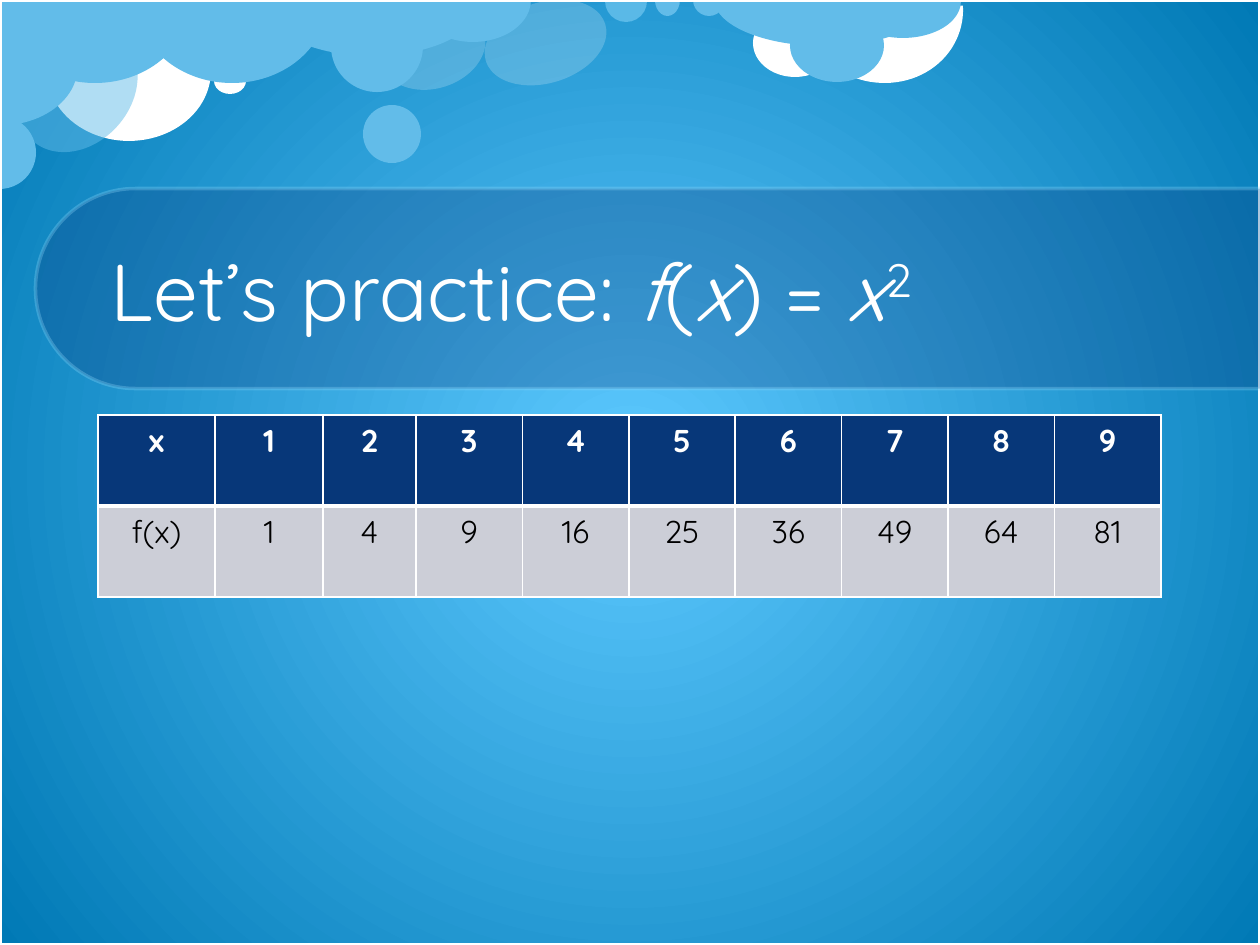
import pptx
import pptx.util
import pptx.oxml
import pptx.oxml.ns
import pptx.dml.color
import pptx.enum.shapes
import pptx.enum.text

RGB = pptx.dml.color.RGBColor
SHAPE = pptx.enum.shapes.MSO_SHAPE
ALIGN = pptx.enum.text.PP_ALIGN
ANCHOR = pptx.enum.text.MSO_ANCHOR
qn = pptx.oxml.ns.qn
Pt = pptx.util.Pt

WHITE = RGB(0xFF, 0xFF, 0xFF)
BLACK = RGB(0x00, 0x00, 0x00)
NAVY = RGB(0x07, 0x37, 0x79)
CLOUD = RGB(0x62, 0xBC, 0xE9)
PALE = RGB(0x8F, 0xD9, 0xFB)
GRAY = RGB(0xCC, 0xCE, 0xD7)
GLOW = RGB(0x5D, 0xC9, 0xFF)
DEEP = RGB(0x00, 0x79, 0xB5)

FONT = "Quicksand"
PX = 914400 // 126
SLIDE_W, SLIDE_H = 1260, 945
HALF = (0, 108)

CLOUDS = [
    (SHAPE.OVAL, (392, -6, 81, 108), WHITE, dict(rot=72.8, alpha=20)),
    (SHAPE.OVAL, (47, 1, 164, 140), WHITE, {}),
    (SHAPE.ARC, (805, -76, 152, 165), WHITE, dict(rot=106.5, adj=(151.8, 44.48))),
    (SHAPE.OVAL, (753, 9, 84, 68), WHITE, {}),
    (SHAPE.PIE, (-1, -83, 192, 166), CLOUD, dict(adj=HALF)),
    (SHAPE.PIE, (262, -55, 220, 111), CLOUD, dict(adj=HALF)),
    (SHAPE.OVAL, (363, 105, 58, 58), CLOUD, {}),
    (SHAPE.OVAL, (24, 23, 107, 135), CLOUD, dict(rot=41.8, alpha=50)),
    (SHAPE.PIE, (-37, 116, 73, 73), CLOUD, dict(rot=270, adj=HALF)),
    (SHAPE.OVAL, (214, 68, 32, 26), WHITE, {}),
    (SHAPE.PIE, (136, -83, 192, 166), CLOUD, dict(adj=HALF)),
    (SHAPE.PIE, (714, -48, 220, 94), CLOUD, dict(adj=HALF)),
    (SHAPE.OVAL, (790, 9, 94, 73), CLOUD, {}),
    (SHAPE.PIE, (845, -35, 116, 73), CLOUD, dict(adj=HALF)),
    (SHAPE.OVAL, (505, -20, 81, 125), WHITE, dict(rot=72.8, alpha=20)),
    (SHAPE.PIE, (605, -20, 42, 42), PALE, dict(alpha=50, adj=HALF)),
    (SHAPE.PIE, (655, -16, 25, 32), CLOUD, dict(adj=HALF)),
    (SHAPE.PIE, (693, -16, 32, 32), CLOUD, dict(adj=HALF)),
    (SHAPE.OVAL, (331, 0, 92, 92), CLOUD, {}),
    (SHAPE.PIE, (415, -42, 116, 84), CLOUD, dict(adj=HALF)),
    (SHAPE.PIE, (-59, -11, 117, 156), CLOUD, dict(rot=270, adj=HALF)),
]
FRAME = (0, 0, SLIDE_W, SLIDE_H)
BAND = (548, -324, 200, 1225)

TITLE_BOX = (98, 189, 1063, 199)
TITLE = [
    ("Let’s practice: ", {}),
    ("f", dict(italic=True)),
    ("(", {}),
    ("x", dict(italic=True)),
    (") = ", {}),
    ("x", dict(italic=True)),
    ("2", dict(baseline=30)),
]

TABLE_LEFT, TABLE_TOP, TABLE_W, ROW_H = 98, 415, 1063, 91
FIRST_COLS = [117, 108, 93]
INPUTS = range(1, 10)
ROWS = [
    (["x"] + [str(n) for n in INPUTS], NAVY, WHITE, True, dict(L=1, R=1, T=1, B=3)),
    (["f(x)"] + [str(n * n) for n in INPUTS], GRAY, BLACK, False, dict(L=1, R=1, T=3, B=1)),
]


def emu(lengths):
    return [round(v * PX) for v in lengths]


def set_alpha(fill_parent, percent):
    clr = next(fill_parent.iter(qn("a:srgbClr")))
    pptx.oxml.ns  # namespace helpers
    clr.makeelement
    alpha = pptx.oxml.parse_xml(
        f'<a:alpha {pptx.oxml.ns.nsdecls("a")} val="{percent * 1000}"/>')
    clr.append(alpha)


def add_text(p, text, size=18, color=WHITE, bold=False, italic=False, baseline=0):
    r = p.add_run()
    r.text = text
    r.font.name = FONT
    r.font.size = Pt(size)
    r.font.color.rgb = color
    r.font.bold = bold
    r.font.italic = italic
    if baseline:
        r.font._element.set("baseline", str(baseline * 1000))


def add_shape(slide, kind, box, color=None, rot=0, alpha=None, adj=(), line=None, line_alpha=None):
    sp = slide.shapes.add_shape(kind, *emu(box))
    sp.shadow.inherit = False
    sp.rotation = rot
    for i, value in enumerate(adj):
        sp.adjustments[i] = value
    if color is None:
        sp.fill.background()
    else:
        sp.fill.solid()
        sp.fill.fore_color.rgb = color
        if alpha:
            set_alpha(sp._element.spPr.find(qn("a:solidFill")), alpha)
    if line is None:
        sp.line.fill.background()
    else:
        sp.line.color.rgb = line
        sp.line.width = Pt(2)
        if line_alpha:
            set_alpha(sp._element.spPr.find(qn("a:ln")), line_alpha)


def set_background(slide):
    fill = slide.background.fill
    fill.gradient()
    for stop, color, position in zip(fill.gradient_stops, (GLOW, DEEP), (0, 1)):
        stop.color.rgb = color
        stop.position = position
    grad = next(slide.element.iter(qn("a:gradFill")))
    radial = pptx.oxml.parse_xml(
        f'<a:path {pptx.oxml.ns.nsdecls("a")} path="circle">'
        '<a:fillToRect l="50000" t="50000" r="50000" b="50000"/></a:path>')
    grad.replace(grad.find(qn("a:lin")), radial)


def add_title(slide):
    sp = slide.shapes.title
    slide.shapes._spTree.append(sp._element)
    sp.left, sp.top, sp.width, sp.height = emu(TITLE_BOX)
    tf = sp.text_frame
    tf.word_wrap = True
    tf.auto_size = pptx.enum.text.MSO_AUTO_SIZE.NONE
    tf.vertical_anchor = ANCHOR.MIDDLE
    p = tf.paragraphs[0]
    p.alignment = ALIGN.LEFT
    p.line_spacing = Pt(56)
    for text, style in TITLE:
        add_text(p, text, size=46, **style)


def set_borders(cell, widths):
    tc_pr = cell._tc.get_or_add_tcPr()
    for side, width in widths.items():
        tc_pr.append(pptx.oxml.parse_xml(
            f'<a:ln{side} {pptx.oxml.ns.nsdecls("a")} w="{Pt(width)}"><a:solidFill>'
            f'<a:srgbClr val="{WHITE}"/></a:solidFill></a:ln{side}>'))


def add_values(slide):
    count = len(ROWS[0][0])
    rest = count - len(FIRST_COLS)
    cols = FIRST_COLS + [(TABLE_W - sum(FIRST_COLS)) / rest] * rest
    box = (TABLE_LEFT, TABLE_TOP, TABLE_W, ROW_H * len(ROWS))
    table = slide.shapes.add_table(len(ROWS), count, *emu(box)).table
    for col, width in zip(table.columns, emu(cols)):
        col.width = width
    for i, (texts, fill, color, bold, borders) in enumerate(ROWS):
        for j, text in enumerate(texts):
            cell = table.cell(i, j)
            set_borders(cell, borders)
            cell.fill.solid()
            cell.fill.fore_color.rgb = fill
            p = cell.text_frame.paragraphs[0]
            p.alignment = ALIGN.CENTER
            add_text(p, text, color=color, bold=bold)


def main():
    prs = pptx.Presentation()
    prs.slide_width, prs.slide_height = emu((SLIDE_W, SLIDE_H))
    slide = prs.slides.add_slide(prs.slide_layouts[5])
    set_background(slide)
    for kind, box, color, style in CLOUDS:
        add_shape(slide, kind, box, color, **style)
    add_shape(slide, SHAPE.RECTANGLE, FRAME, line=WHITE)
    add_shape(slide, SHAPE.ROUND_2_SAME_RECTANGLE, BAND, NAVY, rot=270, alpha=30,
              adj=(0.5, 0), line=PALE, line_alpha=30)
    add_title(slide)
    add_values(slide)
    prs.save("out.pptx")


if __name__ == "__main__":
    main()
